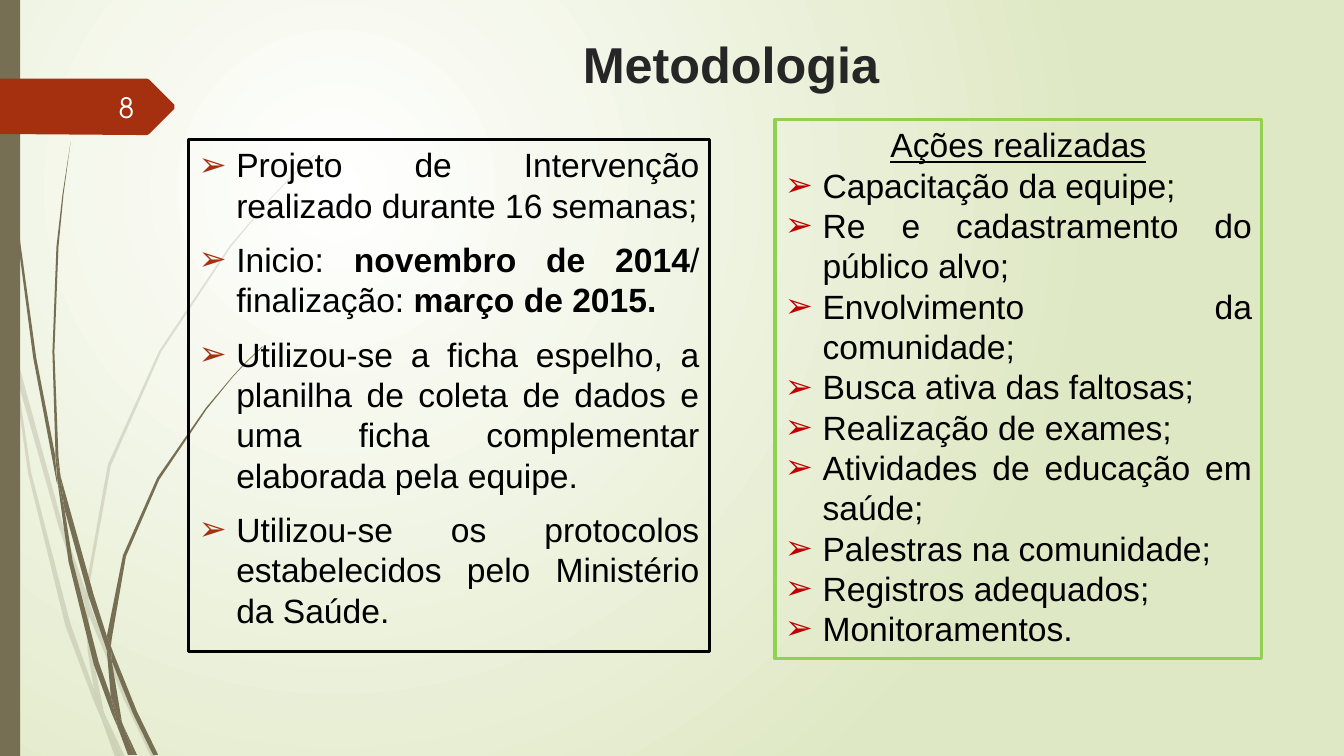
from dataclasses import dataclass

from lxml.etree import SubElement
from pptx import Presentation
from pptx.dml.color import RGBColor
from pptx.enum.shapes import MSO_SHAPE as Preset
from pptx.enum.text import MSO_ANCHOR as Anchor, MSO_AUTO_SIZE as AutoSize, PP_ALIGN as Align
from pptx.oxml.ns import qn
from pptx.util import Cm, Pt


@dataclass(frozen=True)
class Theme:
    heading: str = "262626"
    ink: str = "000000"
    pale: str = "FEFFFF"
    stem: str = "766F54"
    accent: str = "A53010"
    bullet_red: str = "C00000"
    frame_green: str = "92D050"
    glow: str = "FFFFFF"
    backdrop: str = "DFE8C4"
    font: str = "Arial"
    number_font: str = "TeX Gyre Adventor"
    title_size: int = 36
    text_size: int = 24
    number_size: int = 20
    frame_width: float = 2.25


THEME = Theme()
GRID = 0.0254  # centimetres in one step of the outlines
FAINT = 20  # percent opacity of the rear blades

# Outlines of the blade pieces, as corner points in grid steps
REAR_BLADES = [
    [(11, 350), (9, 322), (0, 282), (0, 299), (10, 344)],
    [(58, 522), (84, 599), (85, 586), (62, 520), (14, 345), (17, 376)],
    [(92, 607), (88, 596), (88, 610), (123, 694), (150, 751), (155, 751), (127, 692)],
    [(119, 751), (124, 751), (105, 711)],
    [(93, 683), (70, 619), (31, 469), (17, 376), (11, 350), (28, 470), (65, 621),
     (92, 693), (101, 714), (99, 707)],
    [(84, 599), (87, 646), (93, 683), (96, 692), (105, 711), (103, 706), (91, 646),
     (88, 610), (88, 608)],
    [(88, 584), (110, 462), (160, 349), (229, 245), (268, 198), (290, 175), (312, 154),
     (312, 153), (289, 175), (268, 197), (228, 244), (158, 348), (107, 461), (85, 584),
     (85, 586), (88, 596)],
    [(101, 714), (114, 751), (119, 751)],
    [(88, 608), (88, 610), (88, 596), (85, 586), (84, 599)],
    [(96, 692), (93, 683), (99, 707), (101, 714), (119, 751), (105, 711)],
]
FRONT_BLADES = [
    [(7, 110), (17, 233), (33, 355), (56, 477), (57, 481), (55, 457), (55, 453),
     (36, 355), (19, 232), (8, 109), (5, 48), (4, 0), (3, 0), (4, 48)],
    [(88, 592), (106, 645), (106, 631), (93, 590), (60, 472), (64, 505)],
    [(113, 649), (110, 641), (111, 656), (132, 708), (152, 749), (157, 749), (136, 706)],
    [(110, 691), (98, 657), (72, 556), (64, 505), (57, 477), (68, 557), (93, 659),
     (111, 708), (117, 722), (116, 717)],
    [(60, 472), (58, 453), (54, 349), (58, 245), (63, 193), (70, 141), (62, 193),
     (56, 245), (52, 349), (55, 449)],
    [(133, 749), (136, 749), (122, 719)],
    [(57, 477), (64, 505), (60, 472), (55, 449), (55, 453)],
    [(111, 633), (125, 552), (158, 476), (205, 406), (231, 374), (245, 359), (261, 344),
     (260, 344), (245, 358), (231, 373), (204, 405), (156, 474), (122, 551), (106, 631),
     (110, 641)],
    [(117, 722), (127, 749), (131, 749)],
    [(106, 645), (110, 691), (116, 706), (122, 719), (121, 716), (111, 656), (109, 651)],
    [(106, 645), (109, 651), (111, 656), (110, 641), (106, 631)],
    [(116, 706), (110, 691), (116, 717), (117, 722), (130, 749), (133, 749), (122, 719)],
]
MARKER = [(173, 108), (148, 133), (146, 134), (136, 134), (0, 133), (0, 78),
          (136, 78), (146, 78), (148, 79), (173, 104)]

# Runs alternate between regular and bold
PROJECT = [
    ["Projeto de Intervenção realizado durante 16 semanas;"],
    ["Inicio: ", "novembro de 2014", "/ finalização: ", "março de 2015."],
    ["Utilizou-se a ficha espelho, a planilha de coleta de dados e "
     "uma ficha complementar elaborada pela equipe."],
    ["Utilizou-se os protocolos estabelecidos pelo Ministério da Saúde."],
]
ACTIONS = [
    "Capacitação da equipe;", "Re e cadastramento do público alvo;",
    "Envolvimento da comunidade;", "Busca ativa das faltosas;",
    "Realização de exames;", "Atividades de educação em saúde;",
    "Palestras na comunidade;", "Registros adequados;", "Monitoramentos.",
]


def rgb(code):
    return RGBColor.from_string(code)


def apply(target, values):
    for name, value in values.items():
        setattr(target, name, value)


def place(box, left, top, width, height):
    apply(box, dict(left=Cm(left), top=Cm(top), width=Cm(width), height=Cm(height)))


def paint(shape, color, opacity=100):
    shape.shadow.inherit = False
    shape.fill.solid()
    shape.fill.fore_color.rgb = rgb(color)
    shape.line.fill.background()
    if opacity < 100:
        tint = shape.fill._xPr.find(".//" + qn("a:srgbClr"))
        SubElement(tint, qn("a:alpha"), val=str(opacity * 1000))


def set_background(page):
    fill = page.background.fill
    fill.gradient()
    for stop, color in zip(fill.gradient_stops, (THEME.glow, THEME.backdrop)):
        stop.color.rgb = rgb(color)
    gradient = page.element.find(".//" + qn("a:gradFill"))
    gradient.remove(gradient.find(qn("a:lin")))
    circle = SubElement(gradient, qn("a:path"), {"path": "circle"})
    SubElement(circle, qn("a:fillToRect"), l="50000", t="50000", r="100000", b="100000")


def add_outline(page, corners, color, opacity=100):
    points = [(Cm(x * GRID), Cm(y * GRID)) for x, y in corners]
    builder = page.shapes.build_freeform(*points[0])
    builder.add_line_segments(points[1:])
    paint(builder.convert_to_shape(), color, opacity)


def add_band(page, color, *bounds):
    paint(page.shapes.add_shape(Preset.RECTANGLE, *map(Cm, bounds)), color)


def set_frame(box, color):
    box.line.color.rgb = rgb(color)
    box.line.width = Pt(THEME.frame_width)


def set_text_area(box, anchor=Anchor.TOP):
    apply(box.text_frame, dict(word_wrap=True, auto_size=AutoSize.NONE, vertical_anchor=anchor))
    return box.text_frame


def next_para(frame):
    first = frame.paragraphs[0]
    return frame.add_paragraph() if first.runs else first


def add_span(para, text, size=THEME.text_size, color=THEME.ink, font=THEME.font, **extra):
    span = para.add_run()
    span.text = text
    apply(span.font, dict(size=Pt(size), name=font, **extra))
    span.font.color.rgb = rgb(color)


def add_bullet(frame, texts, color, gap=0):
    para = next_para(frame)
    apply(para, dict(alignment=Align.JUSTIFY, space_before=Pt(gap)))
    props = para._p.get_or_add_pPr()
    props.set("marL", str(Cm(0.95)))
    props.set("indent", str(-Cm(0.95)))
    SubElement(SubElement(props, qn("a:buClr")), qn("a:srgbClr"), val=color)
    SubElement(props, qn("a:buFont"), typeface=THEME.font)
    SubElement(props, qn("a:buChar"), char="➢")
    for index, text in enumerate(texts):
        add_span(para, text, bold=index % 2 == 1)


def main():
    deck = Presentation()
    apply(deck, dict(slide_width=Cm(33.87), slide_height=Cm(19.05)))
    page = deck.slides.add_slide(deck.slide_layouts[1])
    set_background(page)

    # Grass blades, side band and page marker
    for pieces, opacity in ((REAR_BLADES, FAINT), (FRONT_BLADES, 100)):
        for corners in pieces:
            add_outline(page, corners, THEME.stem, opacity)
    add_band(page, THEME.stem, 0, 0, 0.51, 19.05)
    add_outline(page, MARKER, THEME.accent)

    # Title and project list, above the blades
    title, project = page.placeholders
    for holder in (title, project):
        page.shapes.element.append(holder.element)
    place(title, 9.32, 0.71, 18.21, 1.68)
    heading = set_text_area(title).paragraphs[0]
    heading.alignment = Align.CENTER
    add_span(heading, "Metodologia", THEME.title_size, THEME.heading, bold=True)

    place(project, 4.75, 3.51, 13.13, 12.91)
    set_frame(project, THEME.ink)
    frame = set_text_area(project)
    for texts in PROJECT:
        add_bullet(frame, texts, THEME.accent, gap=10)

    # Page number
    number = page.shapes.add_textbox(*map(Cm, (1.47, 2.2, 2.16, 1.02)))
    para = set_text_area(number, Anchor.MIDDLE).paragraphs[0]
    para.alignment = Align.RIGHT
    add_span(para, "8", THEME.number_size, THEME.pale, THEME.number_font)

    # Actions list
    actions = page.shapes.add_textbox(*map(Cm, (19.53, 3.01, 12.27, 13.59)))
    set_frame(actions, THEME.frame_green)
    frame = set_text_area(actions)
    para = next_para(frame)
    para.alignment = Align.CENTER
    add_span(para, "Ações realizadas", underline=True)
    for text in ACTIONS:
        add_bullet(frame, [text], THEME.bullet_red)

    deck.save("out.pptx")


if __name__ == "__main__":
    main()
